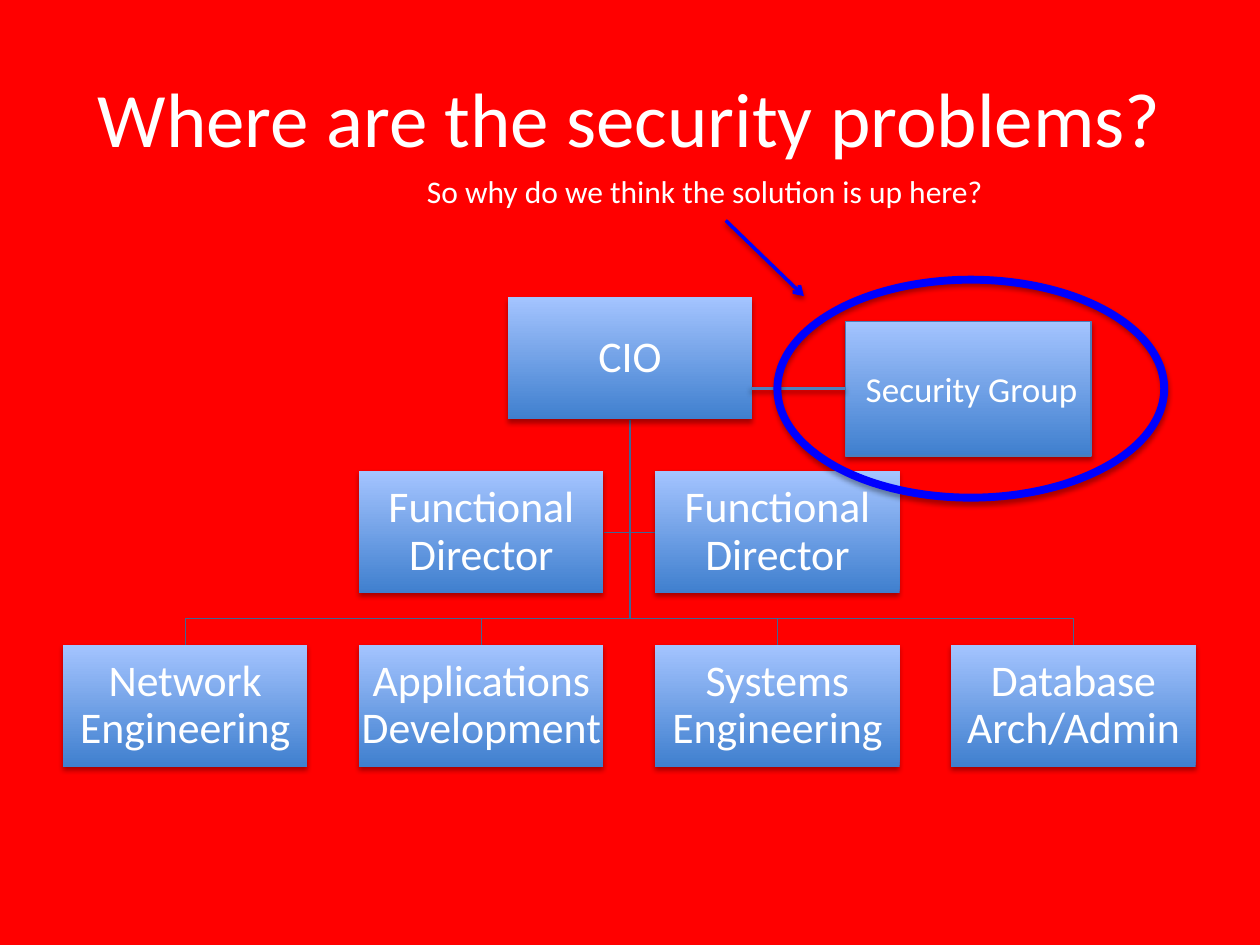
"""Build the slide that asks where security sits in an IT organisation chart."""
from lxml import etree
from pptx import Presentation
from pptx.dml.color import RGBColor
from pptx.enum.shapes import MSO_CONNECTOR, MSO_SHAPE
from pptx.enum.text import MSO_ANCHOR, PP_ALIGN
from pptx.oxml.ns import qn
from pptx.util import Inches, Pt

STRAIGHT = MSO_CONNECTOR.STRAIGHT
RECTANGLE, ELLIPSE = MSO_SHAPE.RECTANGLE, MSO_SHAPE.OVAL
MIDDLE = MSO_ANCHOR.MIDDLE
LEFT, CENTER = PP_ALIGN.LEFT, PP_ALIGN.CENTER
FONT = "Calibri"
COLORS = {
    "background": "FF0000", "text": "FFFFFF", "box_dark": "3F7FCE",
    "box_light": "A4C4FF", "branch": "3F6797", "security_edge": "4B7EBC",
    "security_link": "4F81BD", "highlight": "0000FF", "shadow": "000000",
}
COLORS = {name: RGBColor.from_string(value) for name, value in COLORS.items()}
BOX_WIDTH, BOX_HEIGHT, COLUMN_STEP = 1.94, 0.97, 2.35
COLUMNS = [0.5 + COLUMN_STEP * index for index in range(4)]
CIO_LEFT, CIO_TOP, DIRECTOR_TOP, TEAM_TOP = 4.03, 2.36, 3.74, 5.12
CENTER_X, CIO_BOTTOM = 5, CIO_TOP + BOX_HEIGHT
DIRECTOR_MIDDLE, BUS_Y = DIRECTOR_TOP + BOX_HEIGHT / 2, 4.91


def add_shadow(shape, opacity, distance):
    properties = shape._element.spPr
    effects = properties.find(qn("a:effectLst"))
    if effects is None:
        effects = etree.SubElement(properties, qn("a:effectLst"))
    outer = etree.SubElement(effects, qn("a:outerShdw"), blurRad=str(Pt(3.1)),
                             dist=str(Pt(distance)), dir="5400000", rotWithShape="0")
    color = etree.SubElement(outer, qn("a:srgbClr"), val=str(COLORS["shadow"]))
    etree.SubElement(color, qn("a:alpha"), val=str(opacity * 1000))


def write(shape, text, size, alignment):
    para = shape.text_frame.paragraphs[0]
    para.alignment = alignment
    span = para.add_run()
    span.text = text
    span.font.name, span.font.size = FONT, Pt(size)
    span.font.color.rgb = COLORS["text"]
    return para


deck = Presentation()
deck.slide_width, deck.slide_height = Inches(10), Inches(7.5)
page = deck.slides.add_slide(deck.slide_layouts[5])
page.background.fill.solid()
page.background.fill.fore_color.rgb = COLORS["background"]

title = page.shapes.title
title.left, title.top, title.width, title.height = map(Inches, (0.5, 0.3, 9, 1.25))
title.text_frame.vertical_anchor = MIDDLE
write(title, "Where are the security problems?", 44, CENTER)

branches = [[(CENTER_X, DIRECTOR_MIDDLE), (side, DIRECTOR_MIDDLE)]
            for side in (COLUMNS[1] + BOX_WIDTH, COLUMNS[2])]
for left in COLUMNS:
    team_x = left + BOX_WIDTH / 2
    branches.append([(CENTER_X, BUS_Y), (team_x, BUS_Y), (team_x, TEAM_TOP)])
for points in branches:
    builder = page.shapes.build_freeform(Inches(CENTER_X), Inches(CIO_BOTTOM))
    builder.add_line_segments([(Inches(x), Inches(y)) for x, y in points], close=False)
    branch = builder.convert_to_shape()
    branch.shadow.inherit = False
    branch.fill.background()
    branch.line.color.rgb, branch.line.width = COLORS["branch"], Pt(0.75)

chart_boxes = [
    ("CIO", CIO_LEFT, CIO_TOP),
    ("Network Engineering", COLUMNS[0], TEAM_TOP),
    ("Applications Development", COLUMNS[1], TEAM_TOP),
    ("Systems Engineering", COLUMNS[2], TEAM_TOP),
    ("Database Arch/Admin", COLUMNS[3], TEAM_TOP),
    ("Functional Director", COLUMNS[1], DIRECTOR_TOP),
    ("Functional Director", COLUMNS[2], DIRECTOR_TOP),
]
boxes = [(text, left, top, BOX_WIDTH, BOX_HEIGHT) for text, left, top in chart_boxes]
boxes.append((" Security Group", 6.71, 2.55, 1.95, 1.07))
for text, *place in boxes:
    box = page.shapes.add_shape(RECTANGLE, *map(Inches, place))
    box.shadow.inherit = False
    box.fill.gradient()
    box.fill.gradient_angle = 90
    for stop, name in zip(box.fill.gradient_stops, ("box_dark", "box_light")):
        stop.color.rgb = COLORS[name]
    frame = box.text_frame
    frame.word_wrap, frame.vertical_anchor = True, MIDDLE
    if text == " Security Group":
        security = box
        box.line.color.rgb, box.line.width = COLORS["security_edge"], Pt(0.75)
        write(box, text, 20, LEFT)
    else:
        box.line.fill.background()
        frame.margin_left = frame.margin_right = Inches(0.01)
        frame.margin_top = frame.margin_bottom = Inches(0.02)
        write(box, text, 25, CENTER).line_spacing = 0.9
    add_shadow(box, 35, 1.8)

link = page.shapes.add_connector(STRAIGHT, Inches(6.71), Inches(3.08),
                                 Inches(5.96), Inches(3.08))
link.begin_connect(security, 1)
link.end_y = link.begin_y
link.line.color.rgb, link.line.width = COLORS["security_link"], Pt(2)
add_shadow(link, 38, 1.6)

ring = page.shapes.add_shape(ELLIPSE, *map(Inches, (6.17, 2.22, 3.07, 1.73)))
ring.shadow.inherit = False
ring.fill.background()
ring.line.color.rgb, ring.line.width = COLORS["highlight"], Pt(4.5)
add_shadow(ring, 35, 1.8)

question = page.shapes.add_textbox(*map(Inches, (3.29, 1.32, 4.67, 0.4)))
question.text_frame.word_wrap = False
write(question, "So why do we think the solution is up here?", 18, LEFT)

arrow = page.shapes.add_connector(STRAIGHT, Inches(5.76), Inches(1.75),
                                  Inches(6.38), Inches(2.35))
arrow.line.color.rgb, arrow.line.width = COLORS["highlight"], Pt(2)
etree.SubElement(arrow.line._get_or_add_ln(), qn("a:tailEnd"), type="arrow")
add_shadow(arrow, 38, 1.6)

deck.save("out.pptx")
